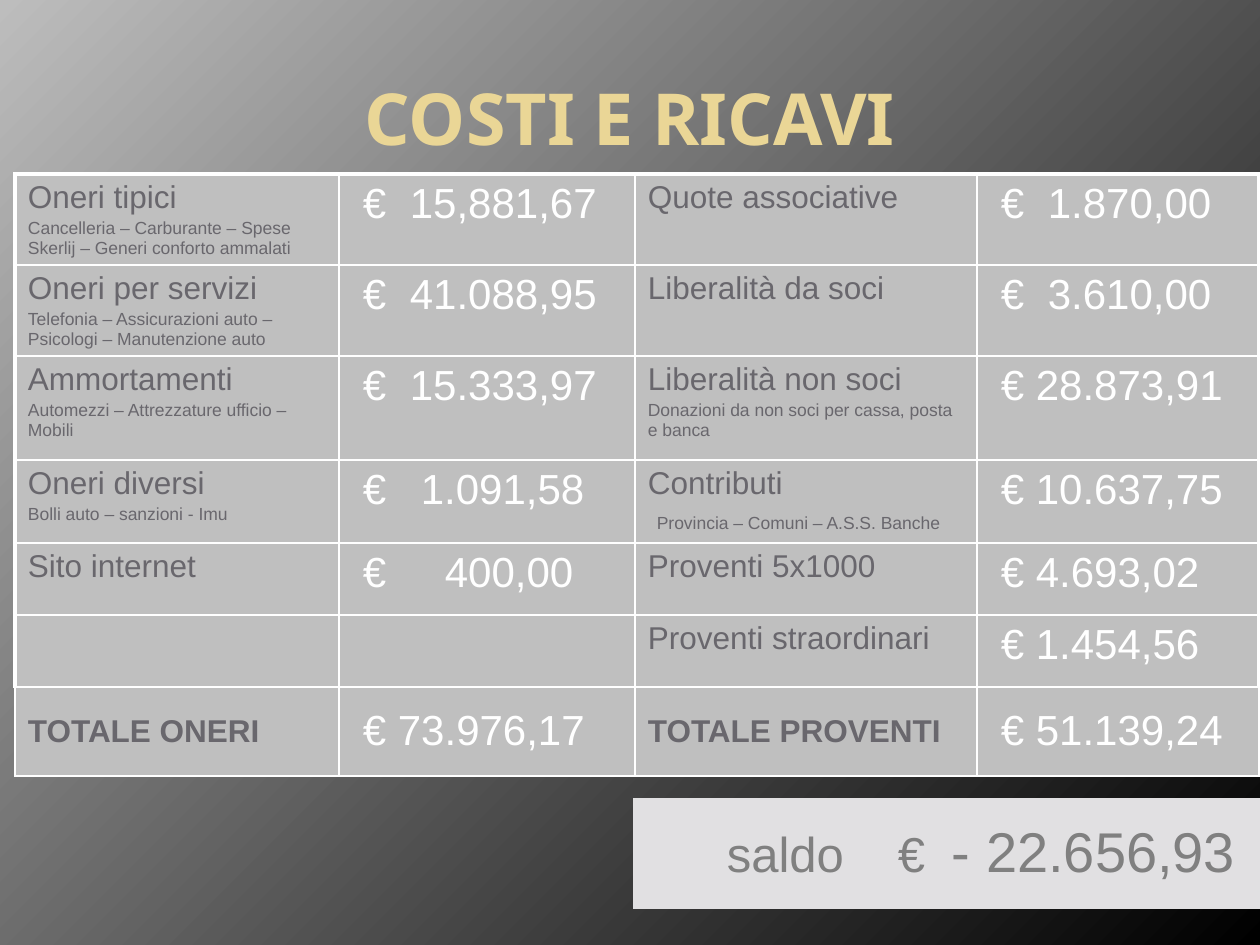
from lxml import etree
from pptx import Presentation
from pptx.dml.color import RGBColor
from pptx.enum.text import MSO_ANCHOR, PP_ALIGN
from pptx.oxml.ns import qn
from pptx.util import Emu, Pt

MIDDLE, TOP = MSO_ANCHOR.MIDDLE, MSO_ANCHOR.TOP
CENTER = PP_ALIGN.CENTER
PX = 914400 / 126
PLAIN_STYLE = "{2D5ABB26-0587-4C30-8999-92F81FD0307C}"

WHITE = RGBColor(0xFF, 0xFF, 0xFF)
BLACK = RGBColor(0x00, 0x00, 0x00)
SILVER = RGBColor(0xBD, 0xBD, 0xBD)
GOLD = RGBColor(0xEA, 0xD6, 0x96)
SLATE = RGBColor(0x69, 0x67, 0x6D)
CELL_GREY = RGBColor(0xBF, 0xBF, 0xBF)
BALANCE_GREY = RGBColor(0xE1, 0xE0, 0xE2)
BALANCE_TEXT = RGBColor(0x80, 0x80, 0x80)

COLUMNS = [324, 296, 342, 282]
ROWS = [91, 91, 104, 83, 72, 72, 89]
COSTS = [
    ("Oneri tipici", "Cancelleria – Carburante – Spese Skerlij – Generi conforto ammalati", "15,881,67", 2),
    ("Oneri per servizi", "Telefonia – Assicurazioni auto – Psicologi – Manutenzione auto", "41.088,95", 2),
    ("Ammortamenti", "Automezzi – Attrezzature ufficio – Mobili", "15.333,97", 2),
    ("Oneri diversi", "Bolli auto – sanzioni - Imu", "1.091,58", 3),
    ("Sito internet", "", "400,00", 5),
    ("", "", "", 1),
    ("TOTALE ONERI", "", "73.976,17", 1),
]
INCOME = [
    ("Quote associative", "", "1.870,00", 2),
    ("Liberalità da soci", "", "3.610,00", 2),
    ("Liberalità non soci", "Donazioni da non soci per cassa, posta\ne banca", "28.873,91", 1),
    ("Contributi", "Provincia – Comuni – A.S.S. Banche", "10.637,75", 1),
    ("Proventi 5x1000", "", "4.693,02", 1),
    ("Proventi straordinari", "", "1.454,56", 1),
    ("TOTALE PROVENTI", "", "51.139,24", 1),
]


def px(length):
    """Turn whole pixels into EMU."""
    return Emu(round(length * PX))


class SlideWriter:
    """Hold the text style and the current slide."""

    font = "Arial"
    title_font = "Noto Sans"

    def __init__(self, slide):
        self.slide = slide

    def background(self, start, end):
        """Fill the slide with a diagonal gradient."""
        fill = self.slide.background.fill
        fill.gradient()
        fill.gradient_angle = 315
        for stop, color in zip(fill.gradient_stops, (start, end)):
            stop.color.rgb = color

    def run(self, paragraph, words, size, color, bold=False, font=None):
        """Add one formatted run."""
        run = paragraph.add_run()
        run.text = words
        run.font.name = font or self.font
        run.font.size = Pt(size)
        run.font.bold = bold
        run.font.color.rgb = color

    def title(self, words, left, top, width, height):
        """Place and format the title placeholder."""
        title = self.slide.shapes.title
        title.left, title.top = px(left), px(top)
        title.width, title.height = px(width), px(height)
        title.text_frame.vertical_anchor = MIDDLE
        paragraph = title.text_frame.paragraphs[0]
        paragraph.alignment = CENTER
        self.run(paragraph, words, 41, GOLD, True, self.title_font)

    def table(self, left, top, columns, rows):
        """Add an unstyled table with the given column and row sizes."""
        frame = self.slide.shapes.add_table(
            len(rows), len(columns), px(left), px(top), px(sum(columns)), px(sum(rows)))
        table = frame.table
        table.first_row = table.horz_banding = False
        table._tbl.tblPr.find(qn("a:tableStyleId")).text = PLAIN_STYLE
        for column, width in zip(table.columns, columns):
            column.width = px(width)
        for row, height in zip(table.rows, rows):
            row.height = px(height)
        return table

    def borders(self, cell, **widths):
        """Draw white cell borders with widths in points."""
        properties = cell._tc.get_or_add_tcPr()
        for side in "LRTB":
            line = etree.SubElement(properties, qn(f"a:ln{side}"), w=str(Pt(widths.get(side, 1))))
            solid = etree.SubElement(line, qn("a:solidFill"))
            etree.SubElement(solid, qn("a:srgbClr"), val=str(WHITE))

    def cell(self, cell, color, anchor=TOP, inset=13):
        """Fill a cell and return its first paragraph."""
        cell.fill.solid()
        cell.fill.fore_color.rgb = color
        cell.vertical_anchor = anchor
        cell.margin_left = px(inset)
        return cell.text_frame.paragraphs[0]

    def tabs(self, paragraph, *stops):
        """Set left tab stops."""
        tab_list = etree.SubElement(paragraph._p.get_or_add_pPr(), qn("a:tabLst"))
        for stop in stops:
            etree.SubElement(tab_list, qn("a:tab"), pos=str(px(stop)), algn="l")

    def label(self, cell, heading, note, total):
        """Write an entry's name and its small note."""
        paragraph = self.cell(cell, CELL_GREY, MIDDLE if total else TOP)
        if heading:
            self.run(paragraph, heading, 18, SLATE, total)
        if note:
            detail = cell.text_frame.add_paragraph()
            indented = heading == "Contributi"
            detail.space_before = Pt(7 if indented else 2)
            if indented:
                detail._p.get_or_add_pPr().set("marL", str(px(9)))
            for number, line in enumerate(note.split("\n")):
                if number:
                    detail.add_line_break()
                self.run(detail, line, 10, SLATE)

    def amount(self, cell, value, gap, total):
        """Write a euro amount, its figure set off by a gap in space widths."""
        paragraph = self.cell(cell, CELL_GREY, MIDDLE if total else TOP, 24)
        if gap > 1:
            self.tabs(paragraph, round(23.4 + 11.7 * gap))
        if value:
            self.run(paragraph, ("€\t" if gap > 1 else "€ ") + value, 24, WHITE)

    def accounts(self, left, top):
        """Build the table of costs and income."""
        table = self.table(left, top, COLUMNS, ROWS)
        last_row, last_column = len(ROWS) - 1, len(COLUMNS) - 1
        for row, entries in enumerate(zip(COSTS, INCOME)):
            total = row == last_row
            for column in range(len(COLUMNS)):
                self.borders(table.cell(row, column),
                             L=2.25 if column == 0 and not total else 1,
                             R=2.25 if column == last_column and not total else 1,
                             T=2.25 if row == 0 else 1)
            for side, (heading, note, value, gap) in enumerate(entries):
                self.label(table.cell(row, 2 * side), heading, note, total)
                self.amount(table.cell(row, 2 * side + 1), value, gap, total)

    def balance(self, left, top):
        """Build the closing balance bar."""
        table = self.table(left, top, [648, 627], [111])
        table.cell(0, 0).fill.background()
        paragraph = self.cell(table.cell(0, 1), BALANCE_GREY, MIDDLE, 94)
        self.tabs(paragraph, 171, 225)
        self.run(paragraph, "saldo\t€\t", 28, BALANCE_TEXT)
        self.run(paragraph, "- 22.656,93", 32, BALANCE_TEXT)


def main():
    """Build and save the slide."""
    deck = Presentation()
    deck.slide_width, deck.slide_height = px(1260), px(945)
    writer = SlideWriter(deck.slides.add_slide(deck.slide_layouts[5]))
    writer.background(SILVER, BLACK)
    writer.title("COSTI E RICAVI", 63, 38, 1134, 158)
    writer.accounts(15, 174)
    writer.balance(-15, 798)
    deck.save("out.pptx")


if __name__ == "__main__":
    main()
